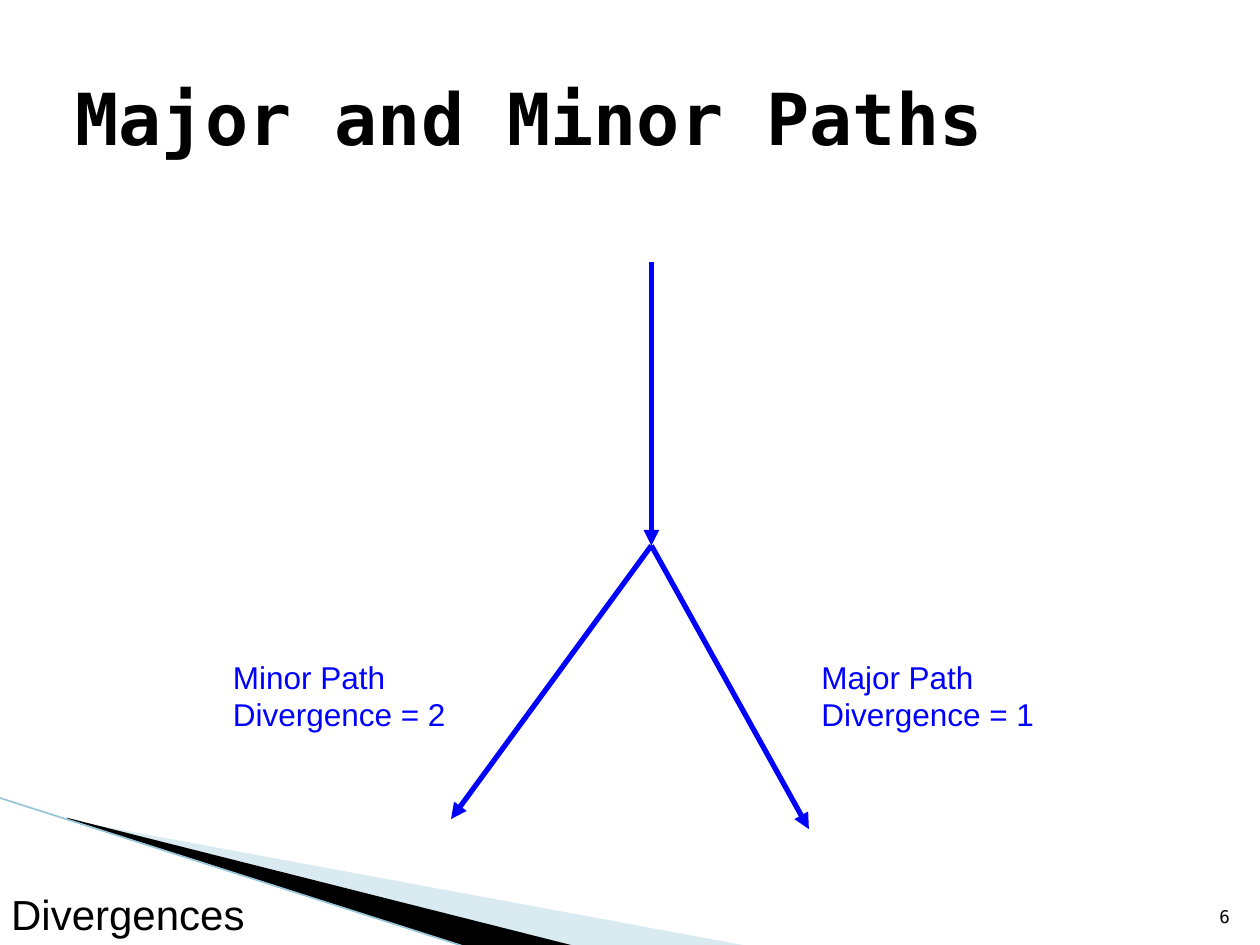
from lxml import etree
from pptx import Presentation
from pptx.dml.color import RGBColor
from pptx.enum.shapes import MSO_CONNECTOR
from pptx.enum.text import MSO_ANCHOR, MSO_AUTO_SIZE, PP_ALIGN
from pptx.oxml.ns import qn
from pptx.util import Inches, Pt

STRAIGHT = MSO_CONNECTOR.STRAIGHT
TOP, MIDDLE, BOTTOM = MSO_ANCHOR.TOP, MSO_ANCHOR.MIDDLE, MSO_ANCHOR.BOTTOM
LEFT, RIGHT = PP_ALIGN.LEFT, PP_ALIGN.RIGHT
NO_FIT = MSO_AUTO_SIZE.NONE
SANS, MONO = "Arial", "DejaVu Sans Mono"
BLACK, BLUE = "000000", "0000FF"
PALE, TEAL = "A0CBDC", "97C5D8"


def color(code):
    return RGBColor.from_string(code)


def write(frame, lines, size, font, ink, bold=False, align=LEFT):
    for i, line in enumerate(lines):
        para = frame.paragraphs[0] if i == 0 else frame.add_paragraph()
        para.alignment = align
        run = para.add_run()
        run.text = line
        run.font.size = Pt(size)
        run.font.name = font
        run.font.bold = bold
        run.font.color.rgb = color(ink)


def add_title(slide, text):
    title = slide.shapes.title
    title.left, title.top = Inches(0.5), Inches(0.3)
    title.width, title.height = Inches(9), Inches(1.25)
    frame = title.text_frame
    frame.auto_size = NO_FIT
    frame.vertical_anchor = MIDDLE
    write(frame, [text], 41, MONO, BLACK, bold=True)


def add_label(slide, box, lines, size, font, ink, anchor=TOP, align=LEFT):
    frame = slide.shapes.add_textbox(*map(Inches, box)).text_frame
    # Only right-aligned text needs the box width to place it
    frame.word_wrap = align == RIGHT
    frame.vertical_anchor = anchor
    write(frame, lines, size, font, ink, align=align)


def add_line(slide, start, end, ink, width, arrow=False):
    line = slide.shapes.add_connector(STRAIGHT, *map(Inches, start + end))
    line.line.color.rgb = color(ink)
    line.line.width = Pt(width)
    if arrow:
        etree.SubElement(line.line._get_or_add_ln(), qn("a:tailEnd"), type="triangle")
    etree.SubElement(line._element.spPr, qn("a:effectLst"))


def add_wedge(slide, points, ink, alpha=100):
    start, *rest = [tuple(map(Inches, point)) for point in points]
    path = slide.shapes.build_freeform(*start)
    path.add_line_segments(rest)
    wedge = path.convert_to_shape()
    wedge.shadow.inherit = False
    wedge.line.fill.background()
    wedge.fill.solid()
    wedge.fill.fore_color.rgb = color(ink)
    if alpha < 100:
        tint = wedge._element.spPr.find(".//" + qn("a:srgbClr"))
        etree.SubElement(tint, qn("a:alpha"), val=str(alpha * 1000))


def main():
    deck = Presentation()
    deck.slide_width, deck.slide_height = Inches(10), Inches(7.5)
    slide = deck.slides.add_slide(deck.slide_layouts[5])

    # Corner decoration
    add_wedge(slide, [(0.55, 6.51), (5.95, 7.51), (4.56, 7.51), (0.55, 6.5)], PALE, 40)
    add_wedge(slide, [(0.53, 6.49), (4.57, 7.51), (3.72, 7.52), (0.54, 6.5)], BLACK)
    add_line(slide, (-0.01, 6.33), (3.71, 7.52), TEAL, 0.95)

    # Title and slide number
    add_title(slide, "Major and Minor Paths")
    add_label(slide, (9.46, 7.01, 0.4, 0.4), ["6"], 10, MONO, BLACK, BOTTOM, RIGHT)

    # One path that splits in two
    fork = (5.17, 4.33)
    add_line(slide, (5.17, 2.08), fork, BLUE, 3, arrow=True)
    for tip in [(3.58, 6.5), (6.42, 6.58)]:
        add_line(slide, fork, tip, BLUE, 3, arrow=True)

    # Branch labels
    for left, name, count in [(6.42, "Major", 1), (1.75, "Minor", 2)]:
        lines = [f"{name} Path", f"Divergence = {count}"]
        add_label(slide, (left, 5.17, 1.89, 0.7), lines, 18, SANS, BLUE)

    # Section name
    add_label(slide, (-0.01, 6.98, 2.33, 0.52), ["Divergences"], 24, SANS, BLACK, BOTTOM)

    deck.save("out.pptx")


if __name__ == "__main__":
    main()
